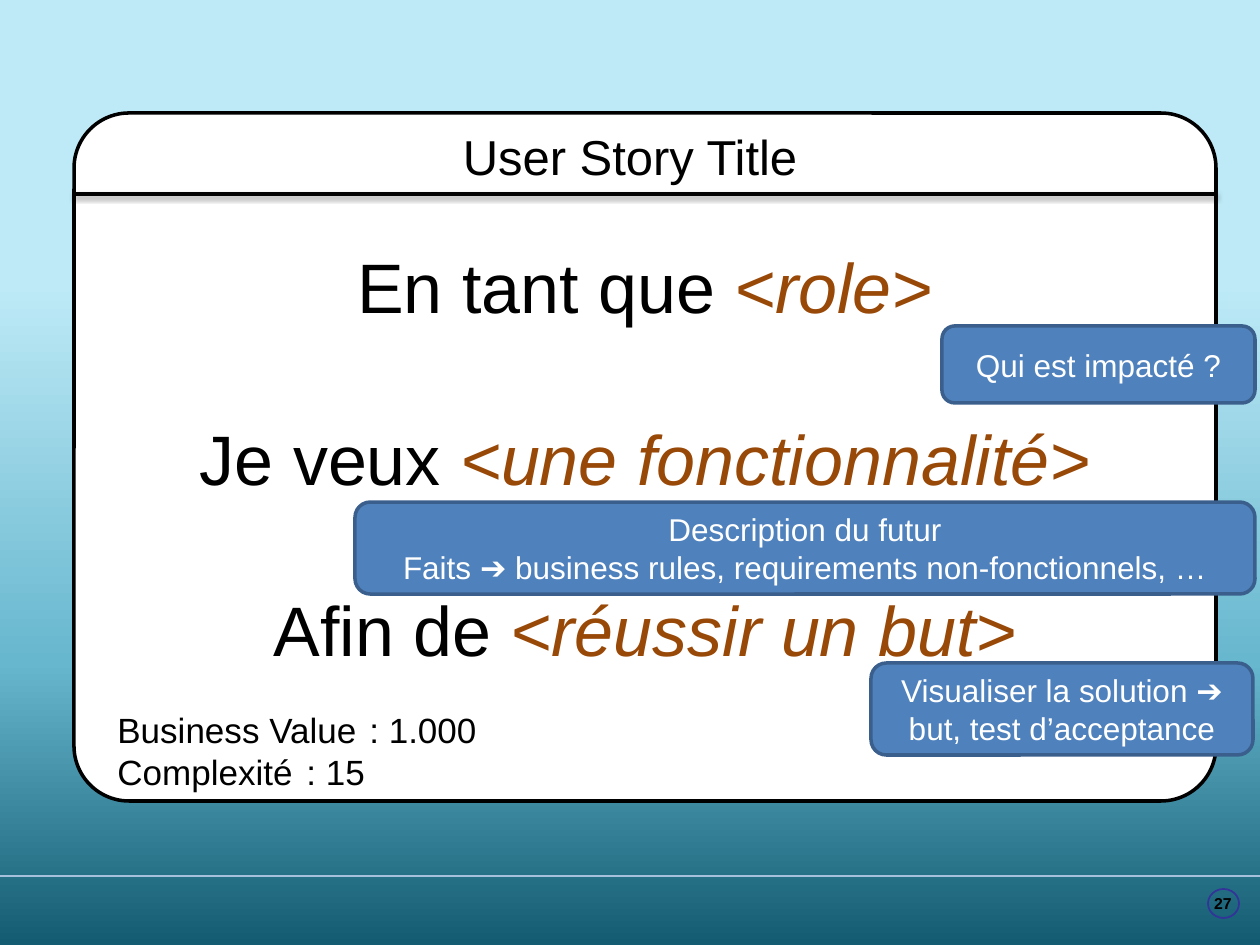
from copy import deepcopy
from dataclasses import dataclass

from lxml.etree import SubElement
from pptx import Presentation
from pptx.dml.color import RGBColor
from pptx.enum.shapes import MSO_CONNECTOR as Connector, MSO_SHAPE as Shape
from pptx.enum.text import MSO_ANCHOR as Anchor, MSO_AUTO_SIZE as AutoSize, PP_ALIGN as Align
from pptx.oxml.ns import qn
from pptx.util import Emu, Pt

EMU_PER_PX = 914400 / 126
BLACK = RGBColor(0x00, 0x00, 0x00)
WHITE = RGBColor(0xFF, 0xFF, 0xFF)
BROWN = RGBColor(0x98, 0x48, 0x07)
BLUE = RGBColor(0x4F, 0x81, 0xBD)
BLUE_EDGE = RGBColor(0x3A, 0x5F, 0x8C)
FOOTER_LINE = RGBColor(0xA7, 0xC1, 0xDD)
NUMBER_RING = RGBColor(0x33, 0x33, 0x99)
SKY = (
    (0.3, RGBColor(0xBE, 0xEA, 0xF7)),
    (0.7, RGBColor(0x67, 0xB7, 0xCE)),
    (1.0, RGBColor(0x13, 0x5B, 0x71)),
)


@dataclass(frozen=True)
class Box:
    left: int
    top: int
    width: int
    height: int

    def emu(self) -> tuple:
        return tuple(px(n) for n in (self.left, self.top, self.width, self.height))


@dataclass(frozen=True)
class Callout:
    box: Box
    lines: tuple


CARD = Box(74, 113, 1142, 688)
STORY = (
    ("En tant que ", "<role>"),
    ("Je veux ", "<une fonctionnalité>"),
    ("Afin de ", "<réussir un but>"),
)
FACTS = ("Business Value \t: 1.000", "Complexité\t: 15")
CALLOUTS = (
    Callout(Box(942, 326, 313, 77), ("Qui est impacté ?",)),
    Callout(Box(871, 663, 382, 92), ("Visualiser la solution ➔ but, test d’acceptance",)),
    Callout(
        Box(355, 502, 900, 92),
        ("Description du futur", "Faits ➔ business rules, requirements non-fonctionnels, …"),
    ),
)


def px(length: int) -> Emu:
    return Emu(round(length * EMU_PER_PX))


def format_font(font, size: float, color: RGBColor, **extra) -> None:
    for key, value in {"name": "Arial", "size": Pt(size), **extra}.items():
        setattr(font, key, value)
    font.color.rgb = color


def format_frame(frame, **extra) -> None:
    values = {"word_wrap": True, "auto_size": AutoSize.NONE, **extra}
    for key, value in values.items():
        setattr(frame, key, value)


def write_lines(frame, lines: tuple, size: float, color: RGBColor, align, **extra) -> None:
    for index, line in enumerate(lines):
        paragraph = frame.paragraphs[0] if index == 0 else frame.add_paragraph()
        paragraph.alignment = align
        run = paragraph.add_run()
        run.text = line
        format_font(run.font, size, color, **extra)


def add_panel(slide, kind, box: Box, fill, edge: RGBColor, weight: float):
    panel = slide.shapes.add_shape(kind, *box.emu())
    panel.shadow.inherit = False
    if fill is None:
        panel.fill.background()
    else:
        panel.fill.solid()
        panel.fill.fore_color.rgb = fill
    panel.line.color.rgb = edge
    panel.line.width = Pt(weight)
    format_frame(panel.text_frame, vertical_anchor=Anchor.MIDDLE)
    return panel


def add_rule(slide, left: int, right: int, y: int, color: RGBColor, weight: float):
    rule = slide.shapes.add_connector(Connector.STRAIGHT, px(left), px(y), px(right), px(y))
    rule.line.color.rgb = color
    rule.line.width = Pt(weight)
    return SubElement(rule._element.spPr, qn("a:effectLst"))


def add_shadow(effects) -> None:
    values = {"blurRad": Pt(3.1), "dist": Pt(1.6), "dir": 90 * 60000, "rotWithShape": 0}
    shadow = SubElement(effects, qn("a:outerShdw"))
    for key, value in values.items():
        shadow.set(key, str(int(value)))
    color = SubElement(shadow, qn("a:srgbClr"), val=str(BLACK))
    SubElement(color, qn("a:alpha"), val="38000")


def paint_background(slide) -> None:
    fill = slide.background.fill
    fill.gradient()
    fill.gradient_angle = 270
    stop_list = slide.element.find(".//" + qn("a:gsLst"))
    stop_list.append(deepcopy(stop_list[0]))
    for stop, (position, color) in zip(fill.gradient_stops, SKY):
        stop.position = position
        stop.color.rgb = color


def add_footer(slide) -> None:
    add_rule(slide, 0, 1260, 876, FOOTER_LINE, 1.25)
    add_panel(slide, Shape.OVAL, Box(1208, 889, 31, 29), None, NUMBER_RING, 1)
    number = slide.shapes.add_textbox(*Box(1198, 888, 50, 30).emu()).text_frame
    format_frame(number, vertical_anchor=Anchor.MIDDLE, margin_top=0, margin_bottom=0)
    write_lines(number, ("27",), 9, BLACK, Align.CENTER, bold=True)


def add_story_card(slide) -> None:
    card = add_panel(slide, Shape.ROUNDED_RECTANGLE, CARD, WHITE, BLACK, 2)
    card.adjustments[0] = 0.08
    frame = card.text_frame
    write_lines(frame, tuple(lead for lead, _ in STORY), 40, BLACK, Align.CENTER)
    for index, (paragraph, (_, slot)) in enumerate(zip(frame.paragraphs, STORY)):
        if index:
            paragraph.space_before = Pt(50)
        run = paragraph.add_run()
        run.text = slot
        format_font(run.font, 40, BROWN, italic=True)
    add_shadow(add_rule(slide, CARD.left, CARD.left + CARD.width, 194, BLACK, 2))


def place_title(slide) -> None:
    title = slide.shapes.title
    title.left, title.top, title.width, title.height = Box(174, 116, 912, 79).emu()
    format_frame(title.text_frame, vertical_anchor=Anchor.MIDDLE)
    write_lines(title.text_frame, ("User Story Title",), 28, BLACK, Align.CENTER)
    slide.shapes._spTree.append(title._element)


def add_facts(slide) -> None:
    facts = slide.shapes.add_textbox(*Box(105, 702, 541, 97).emu()).text_frame
    format_frame(facts)
    write_lines(facts, FACTS, 20, BLACK, Align.LEFT)


def add_callout(slide, callout: Callout) -> None:
    panel = add_panel(slide, Shape.ROUNDED_RECTANGLE, callout.box, BLUE, BLUE_EDGE, 2)
    write_lines(panel.text_frame, callout.lines, 18, WHITE, Align.CENTER)


def main() -> None:
    deck = Presentation()
    deck.slide_width, deck.slide_height = px(1260), px(945)
    slide = deck.slides.add_slide(deck.slide_layouts[5])
    paint_background(slide)
    add_footer(slide)
    add_story_card(slide)
    place_title(slide)
    add_facts(slide)
    for callout in CALLOUTS:
        add_callout(slide, callout)
    deck.save("out.pptx")


if __name__ == "__main__":
    main()
